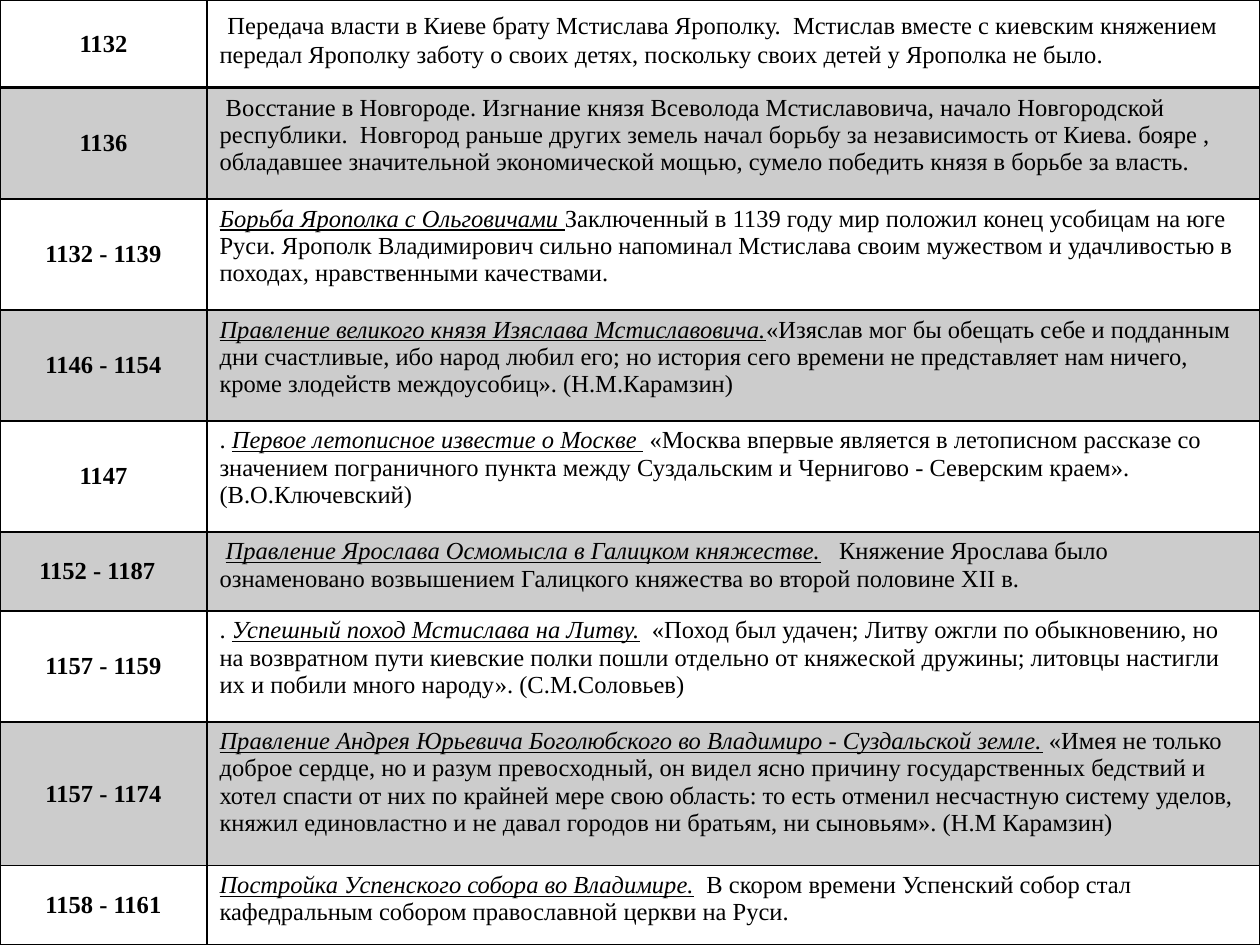
from lxml.etree import SubElement
from pptx import Presentation
from pptx.dml.color import RGBColor
from pptx.enum.text import MSO_ANCHOR, PP_ALIGN
from pptx.oxml.ns import qn
from pptx.util import Emu, Pt

PAGE_WIDTH, PAGE_HEIGHT = 1260, 945
DATE_WIDTH = 207
FONT_NAME = "Times New Roman"
TEXT_SIZE = 14
FIRST_LEAD_SIZE = 18
BLACK = RGBColor(0x00, 0x00, 0x00)
WHITE = RGBColor(0xFF, 0xFF, 0xFF)
GRAY = RGBColor(0xCC, 0xCC, 0xCC)

EVENTS = [
    (88, "1132", " ", "",
     "Передача власти в Киеве брату Мстислава Ярополку.  Мстислав вместе с киевским "
     "княжением передал Ярополку заботу о своих детях, поскольку своих детей у Ярополка не было."),
    (111, "1136", " ", "",
     "Восстание в Новгороде. Изгнание князя Всеволода Мстиславовича, начало Новгородской "
     "республики.  Новгород раньше других земель начал борьбу за независимость от Киева. бояре , "
     "обладавшее значительной экономической мощью, сумело победить князя в борьбе за власть."),
    (111, "1132 - 1139", "", "Борьба Ярополка с Ольговичами ",
     "Заключенный в 1139 году мир положил конец усобицам на юге Руси. Ярополк Владимирович "
     "сильно напоминал Мстислава своим мужеством и удачливостью в походах, нравственными качествами."),
    (111, "1146 - 1154", "", "Правление великого князя Изяслава Мстиславовича.",
     "«Изяслав мог бы обещать себе и подданным дни счастливые, ибо народ любил его; но история "
     "сего времени не представляет нам ничего, кроме злодейств междоусобиц». (Н.М.Карамзин)"),
    (111, "1147", ". ", "Первое летописное известие о Москве ",
     " «Москва впервые является в летописном рассказе со значением пограничного пункта между "
     "Суздальским и Чернигово - Северским краем». (В.О.Ключевский)"),
    (79, "1152 - 1187  ", " ", "Правление Ярослава Осмомысла в Галицком княжестве.",
     "   Княжение Ярослава было ознаменовано возвышением Галицкого княжества "
     "во второй половине XII в."),
    (111, "1157 - 1159", ". ", "Успешный поход Мстислава на Литву.",
     "  «Поход был удачен; Литву ожгли по обыкновению, но на возвратном пути киевские полки "
     "пошли отдельно от княжеской дружины; литовцы настигли их и побили много народу». (С.М.Соловьев)"),
    (144, "1157 - 1174", "", "Правление Андрея Юрьевича Боголюбского во Владимиро - Суздальской земле.",
     " «Имея не только доброе сердце, но и разум превосходный, он видел ясно причину "
     "государственных бедствий и хотел спасти от них по крайней мере свою область: то есть отменил "
     "несчастную систему уделов, княжил единовластно и не давал городов ни братьям, ни сыновьям». "
     "(Н.М Карамзин)"),
    (79, "1158 - 1161", "", "Постройка Успенского собора во Владимире.",
     "  В скором времени Успенский собор стал кафедральным собором православной церкви на Руси."),
]


def px(length):
    return Emu(round(length * 914400 / 126))


def set_borders(cell, top, bottom):
    properties = cell._tc.get_or_add_tcPr()
    for side, points in (("L", 1), ("R", 1), ("T", top), ("B", bottom)):
        line = SubElement(properties, qn(f"a:ln{side}"), w=str(Pt(points)))
        fill = SubElement(line, qn("a:solidFill"))
        SubElement(fill, qn("a:srgbClr"), val=str(BLACK))


def format_paragraph(para, bold):
    para.font.name = FONT_NAME
    para.font.size = Pt(TEXT_SIZE)
    para.font.bold = bold
    para.font.color.rgb = BLACK


def write_date(cell, date):
    cell.vertical_anchor = MSO_ANCHOR.MIDDLE
    para = cell.text_frame.paragraphs[0]
    para.alignment = PP_ALIGN.CENTER
    para.add_run().text = date
    format_paragraph(para, True)


def write_event(cell, lead, heading, body, lead_size):
    para = cell.text_frame.paragraphs[0]
    format_paragraph(para, False)
    for text in (lead, heading, body):
        if text:
            span = para.add_run()
            span.text = text
            if text == heading:
                span.font.italic = True
                span.font.underline = True
            elif text == lead and lead_size != TEXT_SIZE:
                span.font.size = Pt(lead_size)


def add_chronology(page, left, top, width, height):
    frame = page.shapes.add_table(len(EVENTS), 2, px(left), px(top), px(width), px(height))
    table = frame.table
    table.first_row = False
    table.horz_banding = False
    table.columns[0].width = px(DATE_WIDTH)
    table.columns[1].width = px(width - DATE_WIDTH)
    for index, (row_height, date, lead, heading, body) in enumerate(EVENTS):
        table.rows[index].height = px(row_height)
        date_cell, event_cell = table.rows[index].cells
        write_date(date_cell, date)
        write_event(event_cell, lead, heading, body, TEXT_SIZE if index else FIRST_LEAD_SIZE)
        for cell in (date_cell, event_cell):
            set_borders(cell, 2 if index == 1 else 1, 2 if index == 0 else 1)
            cell.fill.solid()
            cell.fill.fore_color.rgb = GRAY if index % 2 else WHITE


def main():
    deck = Presentation()
    deck.slide_width = px(PAGE_WIDTH)
    deck.slide_height = px(PAGE_HEIGHT)
    page = deck.slides.add_slide(deck.slide_layouts[6])
    add_chronology(page, 0, 0, PAGE_WIDTH, PAGE_HEIGHT)
    deck.save("out.pptx")


if __name__ == "__main__":
    main()
